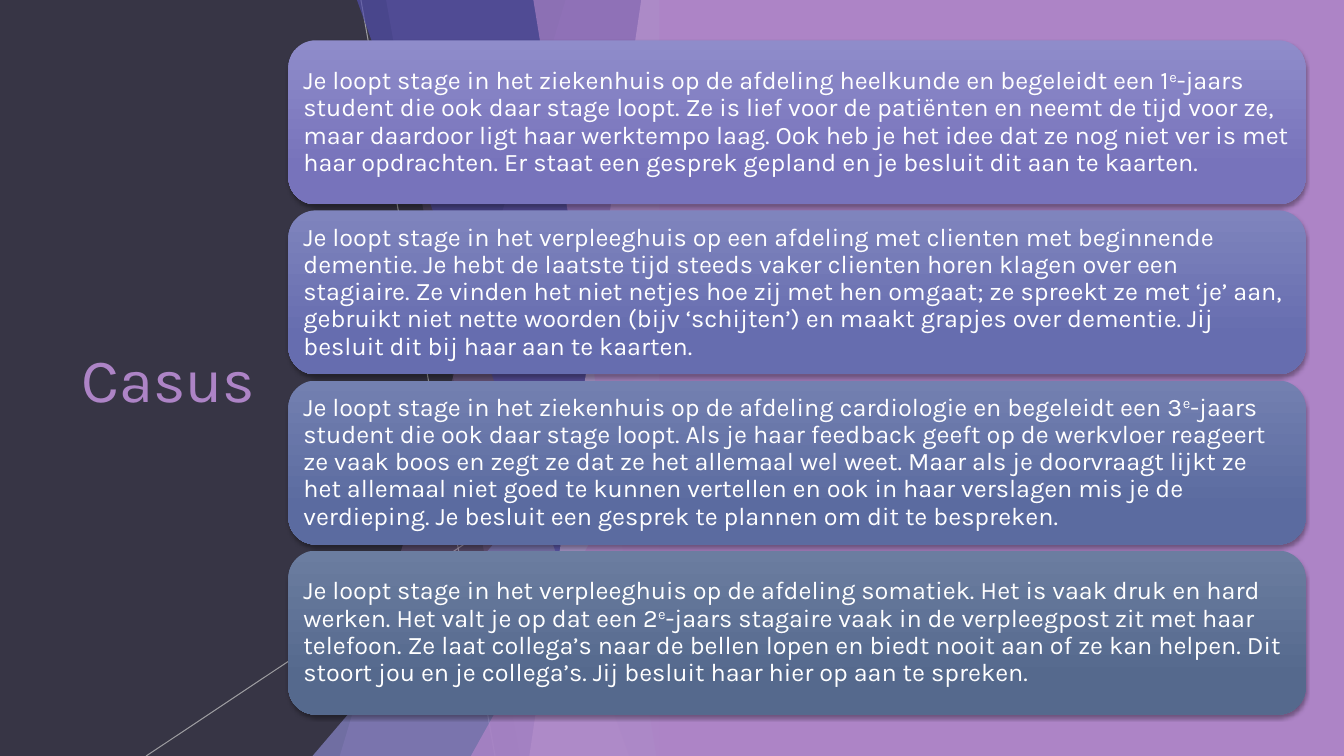
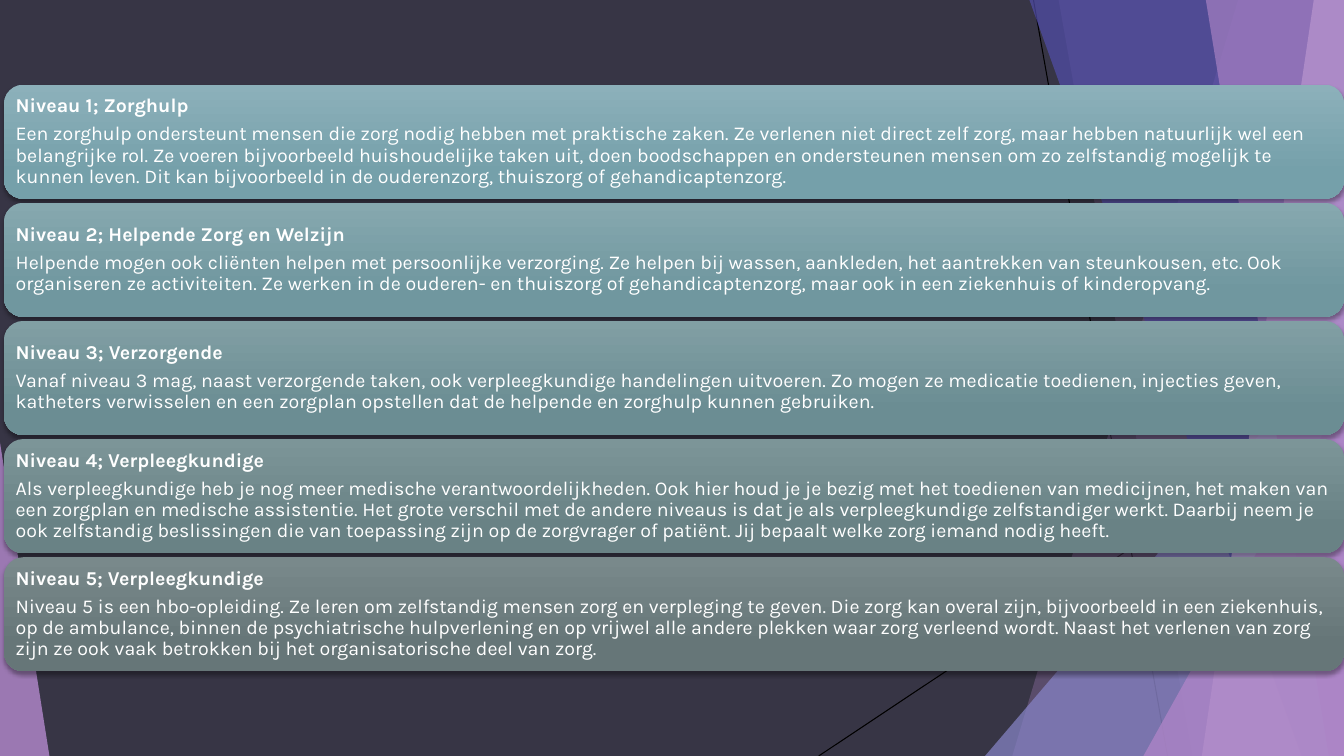
from dataclasses import dataclass

from lxml import etree
from pptx import Presentation
from pptx.dml.color import RGBColor
from pptx.enum.shapes import MSO_CONNECTOR, MSO_SHAPE
from pptx.enum.text import MSO_ANCHOR, PP_ALIGN
from pptx.oxml.ns import qn
from pptx.util import Inches, Pt


@dataclass(frozen=True)
class Theme:
    font: str = "Karla"
    background: str = "373545"
    accent: str = "AD84C6"
    accent_light: str = "CEB5DD"
    violet: str = "8784C7"
    indigo: str = "524EAB"
    text: str = "FFFFFF"
    black: str = "000000"
    pale_line: str = "BFBFBF"
    title_size: int = 44
    case_size: int = 18
    level_size: int = 14


THEME = Theme()
WIDTH, HEIGHT = 13.33, 7.5
TITLE_ONLY, BLANK = 5, 6

# Slanted panels: top x, bottom x, colour, opacity
BACK_PANELS = [
    (12.28, 10.04, THEME.accent, 30),
    (10.5, 11.83, THEME.accent, 20),
]
FRONT_PANELS = [
    (10.21, 12.91, THEME.indigo, 70),
    (13.03, 11.92, THEME.accent_light, 70),
    (11.96, 13.18, THEME.accent, 65),
]

# Each case: gradient colours, then text pieces of which every second is superscript
CASES = [
    ("8F8CCA", "7773BB", (
        "Je loopt stage in het ziekenhuis op de afdeling heelkunde en begeleidt een 1",
        "e",
        "-jaars student die ook daar stage loopt. Ze is lief voor de patiënten en neemt "
        "de tijd voor ze, maar daardoor ligt haar werktempo laag. Ook heb je het idee dat "
        "ze nog niet ver is met haar opdrachten. Er staat een gesprek gepland en je "
        "besluit dit aan te kaarten.")),
    ("7F84BD", "666DAF", (
        "Je loopt stage in het verpleeghuis op een afdeling met clienten met beginnende "
        "dementie. Je hebt de laatste tijd steeds vaker clienten horen klagen over een "
        "stagiaire. Ze vinden het niet netjes hoe zij met hen omgaat; ze spreekt ze met "
        "‘je’ aan, gebruikt niet nette woorden (bijv ‘schijten’) en maakt grapjes over "
        "dementie. Jij besluit dit bij haar aan te kaarten.",)),
    ("7380B0", "5B6BA0", (
        "Je loopt stage in het ziekenhuis op de afdeling cardiologie en begeleidt een 3",
        "e",
        "-jaars student die ook daar stage loopt. Als je haar feedback geeft op de "
        "werkvloer reageert ze vaak boos en zegt ze dat ze het allemaal wel weet. Maar als "
        "je doorvraagt lijkt ze het allemaal niet goed te kunnen vertellen en ook in haar "
        "verslagen mis je de verdieping. Je besluit een gesprek te plannen om dit te "
        "bespreken.")),
    ("6B7DA0", "55698D", (
        "Je loopt stage in het verpleeghuis op de afdeling somatiek. Het is vaak druk en "
        "hard werken. Het valt je op dat een 2",
        "e",
        "-jaars stagaire vaak in de verpleegpost zit met haar telefoon. Ze laat collega’s "
        "naar de bellen lopen en biedt nooit aan of ze kan helpen. Dit stoort jou en je "
        "collega’s. Jij besluit haar hier op aan te spreken.")),
]

# Each level: gradient colours, heading, description
LEVELS = [
    ("8CB0BA", "75A0AA", "Niveau 1; Zorghulp",
     "Een zorghulp ondersteunt mensen die zorg nodig hebben met praktische zaken. Ze "
     "verlenen niet direct zelf zorg, maar hebben natuurlijk wel een belangrijke rol. Ze "
     "voeren bijvoorbeeld huishoudelijke taken uit, doen boodschappen en ondersteunen "
     "mensen om zo zelfstandig mogelijk te kunnen leven. Dit kan bijvoorbeeld in de "
     "ouderenzorg, thuiszorg of gehandicaptenzorg."),
    ("86A8AF", "70979F", "Niveau 2; Helpende Zorg en Welzijn",
     "Helpende mogen ook cliënten helpen met persoonlijke verzorging. Ze helpen bij "
     "wassen, aankleden, het aantrekken van steunkousen, etc. Ook organiseren ze "
     "activiteiten. Ze werken in de ouderen- en thuiszorg of gehandicaptenzorg, maar ook "
     "in een ziekenhuis of kinderopvang."),
    ("819FA4", "6B8D93", "Niveau 3; Verzorgende",
     "Vanaf niveau 3 mag, naast verzorgende taken, ook verpleegkundige handelingen "
     "uitvoeren. Zo mogen ze medicatie toedienen, injecties geven, katheters verwisselen "
     "en een zorgplan opstellen dat de helpende en zorghulp kunnen gebruiken."),
    ("7C9598", "698285", "Niveau 4; Verpleegkundige",
     "Als verpleegkundige heb je nog meer medische verantwoordelijkheden. Ook hier houd je "
     "je bezig met het toedienen van medicijnen, het maken van een zorgplan en medische "
     "assistentie. Het grote verschil met de andere niveaus is dat je als verpleegkundige "
     "zelfstandiger werkt. Daarbij neem je ook zelfstandig beslissingen die van toepassing "
     "zijn op de zorgvrager of patiënt. Jij bepaalt welke zorg iemand nodig heeft."),
    ("79898B", "667678", "Niveau 5; Verpleegkundige",
     "Niveau 5 is een hbo-opleiding. Ze leren om zelfstandig mensen zorg en verpleging te "
     "geven. Die zorg kan overal zijn, bijvoorbeeld in een ziekenhuis, op de ambulance, "
     "binnen de psychiatrische hulpverlening en op vrijwel alle andere plekken waar zorg "
     "verleend wordt. Naast het verlenen van zorg zijn ze ook vaak betrokken bij het "
     "organisatorische deel van zorg."),
]


def rgb(code):
    return RGBColor.from_string(code)


def set_opacity(shape, percent):
    color = shape._element.spPr.find(".//" + qn("a:srgbClr"))
    etree.SubElement(color, qn("a:alpha"), val=str(percent * 1000))


def paint(shape, color, opacity=100):
    """Give a shape a plain fill without outline or shadow."""
    shape.fill.solid()
    shape.fill.fore_color.rgb = rgb(color)
    shape.line.fill.background()
    shape.shadow.inherit = False
    if opacity < 100:
        set_opacity(shape, opacity)


def add_thin_line(slide, start, end, color, opacity):
    line = slide.shapes.add_connector(
        MSO_CONNECTOR.STRAIGHT, *map(Inches, start + end))
    line.line.color.rgb = rgb(color)
    line.line.width = Pt(0.75)
    if opacity < 100:
        set_opacity(line, opacity)
    etree.SubElement(line._element.spPr, qn("a:effectLst"))


def add_panel(slide, top_x, bottom_x, right, color, opacity):
    """Add a full-height panel with a slanted left edge."""
    outline = slide.shapes.build_freeform(Inches(top_x), 0)
    corners = [(right, 0), (right, HEIGHT), (bottom_x, HEIGHT)]
    outline.add_line_segments([(Inches(x), Inches(y)) for x, y in corners])
    paint(outline.convert_to_shape(), color, opacity)


def add_corner(slide, left, top, width, apex, color, opacity):
    """Add a right triangle standing on the bottom edge; apex 0 is left, 1 is right."""
    corner = slide.shapes.add_shape(
        MSO_SHAPE.ISOSCELES_TRIANGLE,
        *map(Inches, (left, top, width, HEIGHT - top)))
    corner.adjustments[0] = apex
    paint(corner, color, opacity)


def add_facets(slide, right, line_color, line_opacity=100):
    """Draw the faceted band whose right edge lies at the given x."""
    shift = right - WIDTH
    for start, end in [((10.25, 0), (11.58, HEIGHT)), ((WIDTH, 4.03), (8.12, HEIGHT))]:
        add_thin_line(slide, (start[0] + shift, start[1]), (end[0] + shift, end[1]),
                      line_color, line_opacity)

    def add_panels(panels):
        for top_x, bottom_x, color, opacity in panels:
            add_panel(slide, top_x + shift, bottom_x + shift, right, color, opacity)

    add_panels(BACK_PANELS)
    add_corner(slide, 9.77 + shift, 3.33, 3.56, 1, THEME.violet, 72)
    add_panels(FRONT_PANELS)
    add_corner(slide, 11.34 + shift, 3.93, 1.99, 1, THEME.accent, 80)


def add_run(paragraph, text, size, color=THEME.text, bold=False, superscript=False):
    run = paragraph.add_run()
    run.text = text
    run.font.name = THEME.font
    run.font.size = Pt(size)
    run.font.bold = bold
    run.font.color.rgb = rgb(color)
    if superscript:
        run.font._element.set("baseline", "30000")


def add_card_shadow(card):
    card.shadow.inherit = False
    effects = card._element.spPr.find(qn("a:effectLst"))
    shadow = etree.SubElement(
        effects, qn("a:outerShdw"), blurRad=str(Pt(3)), dist=str(Pt(2)),
        dir="5400000", algn="ctr", rotWithShape="0")
    color = etree.SubElement(shadow, qn("a:srgbClr"), val=THEME.black)
    etree.SubElement(color, qn("a:alpha"), val="35000")


def add_card(slide, box, colors, inset):
    """Add a rounded gradient card and return its text frame."""
    card = slide.shapes.add_shape(MSO_SHAPE.ROUNDED_RECTANGLE, *map(Inches, box))
    card.fill.gradient()
    card.fill.gradient_angle = 270
    for stop, position, color in zip(card.fill.gradient_stops, (0, 0.78), colors):
        stop.position = position
        stop.color.rgb = rgb(color)
    card.line.fill.background()
    add_card_shadow(card)
    frame = card.text_frame
    frame.word_wrap = True
    frame.vertical_anchor = MSO_ANCHOR.MIDDLE
    frame.margin_left = frame.margin_right = Inches(inset)
    frame.margin_top = frame.margin_bottom = Inches(inset)
    return frame


def stack(left, top, width, bottom, gap, count):
    """Yield equal boxes that fill the height from top to bottom."""
    height = (bottom - top - gap * (count - 1)) / count
    for index in range(count):
        yield left, top + index * (height + gap), width, height


def format_paragraph(paragraph):
    paragraph.alignment = PP_ALIGN.LEFT
    paragraph.line_spacing = 0.9


def add_title(slide, text):
    title = slide.shapes.title
    title.left, title.top, title.width, title.height = map(
        Inches, (0.71, 1.51, 3.88, 4.48))
    title.text_frame.vertical_anchor = MSO_ANCHOR.MIDDLE
    paragraph = title.text_frame.paragraphs[0]
    paragraph.alignment = PP_ALIGN.LEFT
    add_run(paragraph, text, THEME.title_size, THEME.accent)


def build_cases(prs):
    slide = prs.slides.add_slide(prs.slide_layouts[TITLE_ONLY])
    add_title(slide, "Casus")
    add_facets(slide, 6.66, THEME.pale_line, 75)
    side = slide.shapes.add_shape(
        MSO_SHAPE.RECTANGLE, *map(Inches, (6.54, 0, WIDTH - 6.54, HEIGHT)))
    paint(side, THEME.accent)
    boxes = stack(2.86, 0.4, 10.09, 7.09, 0.06, len(CASES))
    for box, (upper, lower, pieces) in zip(boxes, CASES):
        paragraph = add_card(slide, box, (upper, lower), 0.07).paragraphs[0]
        format_paragraph(paragraph)
        for index, piece in enumerate(pieces):
            add_run(paragraph, piece, THEME.case_size, superscript=index % 2 == 1)


def build_levels(prs):
    slide = prs.slides.add_slide(prs.slide_layouts[BLANK])
    add_facets(slide, WIDTH, THEME.black)
    add_corner(slide, 0, 4.39, 0.49, 0, THEME.accent, 85)
    boxes = stack(0.04, 0.84, 13.29, 6.66, 0.04, len(LEVELS))
    for box, (upper, lower, heading, description) in zip(boxes, LEVELS):
        frame = add_card(slide, box, (upper, lower), 0.06)
        head, body = frame.paragraphs[0], frame.add_paragraph()
        for paragraph in (head, body):
            format_paragraph(paragraph)
        head.space_after = Pt(5)
        add_run(head, heading, THEME.level_size, bold=True)
        add_run(body, description, THEME.level_size)


def main():
    prs = Presentation()
    prs.slide_width, prs.slide_height = Inches(WIDTH), Inches(HEIGHT)
    backdrop = prs.slide_master.background.fill
    backdrop.solid()
    backdrop.fore_color.rgb = rgb(THEME.background)
    build_cases(prs)
    build_levels(prs)
    prs.save("out.pptx")


if __name__ == "__main__":
    main()
